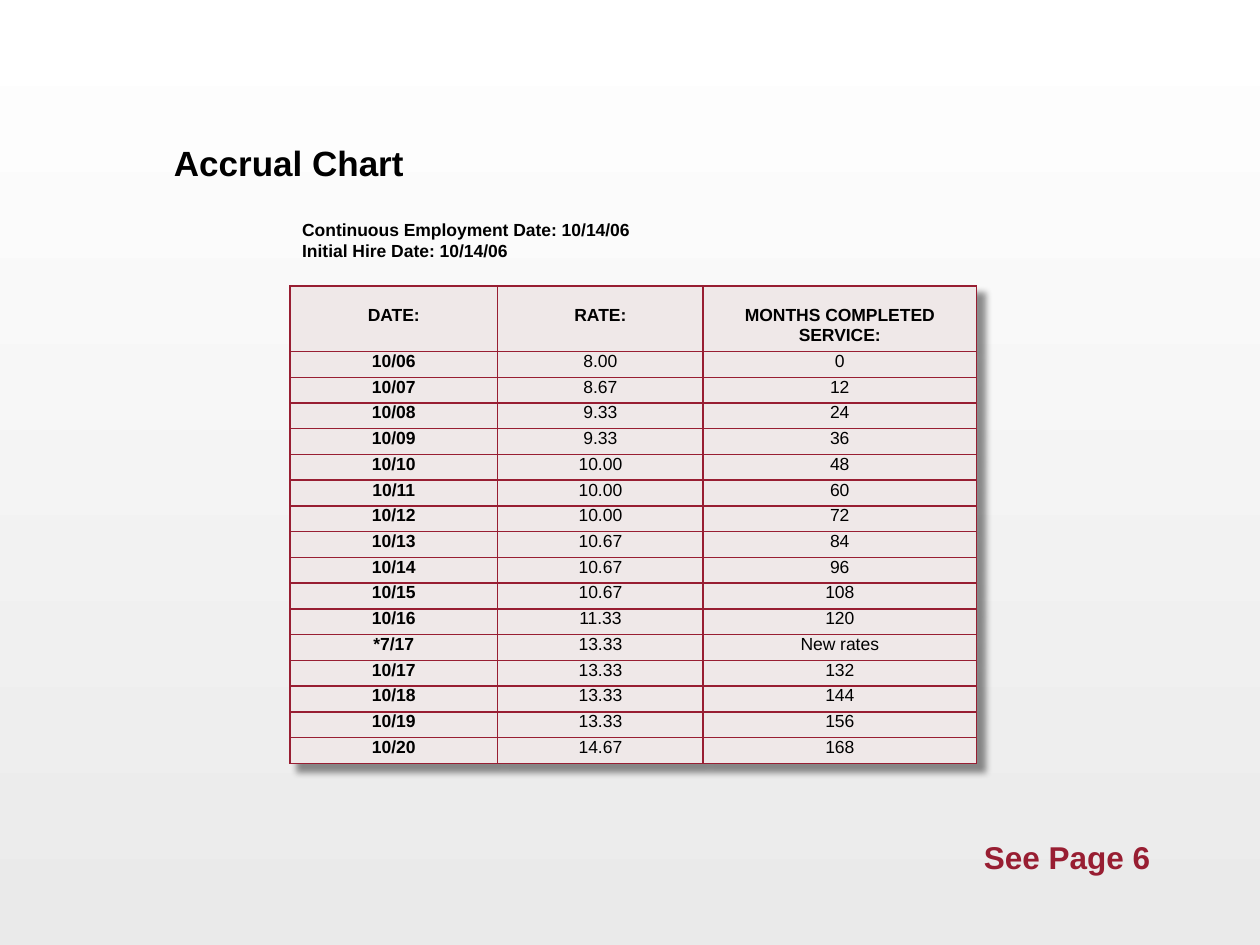
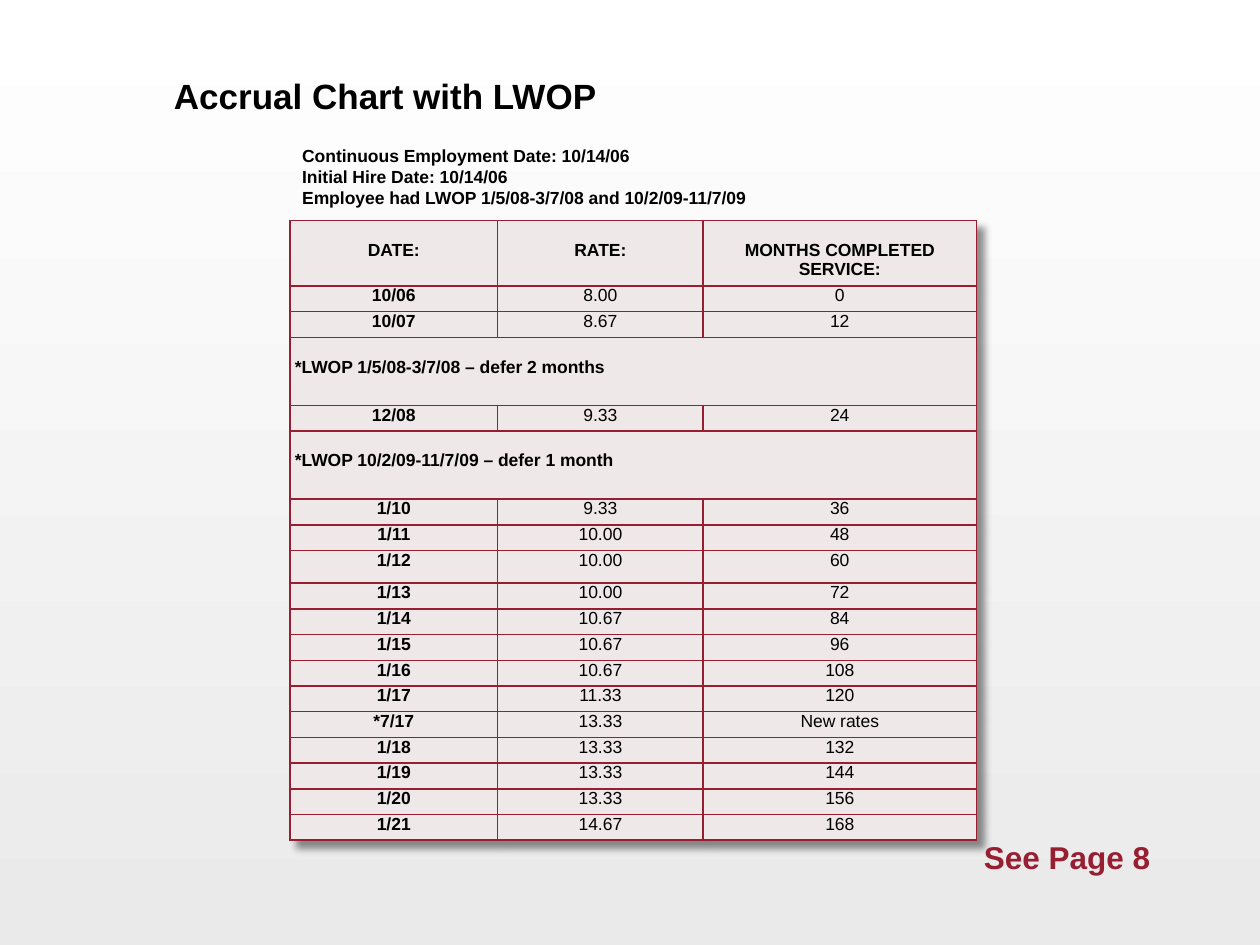
"""Builds two leave accrual slides, each with a table of rates by months of service."""
import dataclasses

import lxml.etree
import pptx
import pptx.dml.color
import pptx.enum.text
import pptx.oxml
import pptx.util
from pptx.util import Inches


@dataclasses.dataclass(frozen=True)
class Theme:
    font: str = "Arial"
    ink: str = "000000"
    crimson: str = "981E32"
    cell: str = "EFE8E8"
    backdrop: tuple = ("EAEAEA", "FFFFFF")
    title_size: int = 20
    page_size: int = 18
    text_size: int = 10


THEME = Theme()
RGB = pptx.dml.color.RGBColor.from_string
ALIGN = pptx.enum.text.PP_ALIGN
FIT = pptx.enum.text.MSO_AUTO_SIZE.SHAPE_TO_FIT_TEXT
NS = 'xmlns:a="http://schemas.openxmlformats.org/drawingml/2006/main"'
SHADOW = (
    f'<a:effectLst {NS}><a:outerShdw blurRad="50800" dist="76200" dir="2700000" algn="tl">'
    '<a:srgbClr val="000000"><a:alpha val="43000"/></a:srgbClr></a:outerShdw></a:effectLst>'
)
COLUMNS = [1.65, 1.63, 2.17]
HEADINGS = ["DATE:", "RATE:", "MONTHS COMPLETED SERVICE:"]
HEADING_HEIGHT, NOTE_HEIGHT, TEXT_LINE = 0.52, 0.54, 0.16
RATES = ["8.00", "8.67", "9.33", "9.33", "10.00", "10.00", "10.00", "10.67",
         "10.67", "10.67", "11.33", "13.33", "13.33", "13.33", "13.33", "14.67"]
MONTHS = [str(months) for months in range(0, 169, 12)]
MONTHS.insert(11, "New rates")
EMPLOYMENT = ["Continuous Employment Date: 10/14/06", "Initial Hire Date: 10/14/06"]

CHARTS = [
    {
        "title": "Accrual Chart", "title_top": 1.11,
        "facts": EMPLOYMENT, "facts_box": (1.69, 2.83, 0.44),
        "table_top": 2.27, "table_height": 3.79, "fixed_heights": {},
        "dates": ["10/06", "10/07", "10/08", "10/09", "10/10", "10/11", "10/12", "10/13",
                  "10/14", "10/15", "10/16", "*7/17", "10/17", "10/18", "10/19", "10/20"],
        "page": "See Page 6",
    },
    {
        "title": "Accrual Chart with LWOP", "title_top": 0.58,
        "facts": EMPLOYMENT + ["Employee had LWOP 1/5/08-3/7/08 and 10/2/09-11/7/09"],
        "facts_box": (1.1, 3.76, 0.61),
        "table_top": 1.75, "table_height": 4.92, "fixed_heights": {"1/12": 0.26},
        "dates": ["10/06", "10/07", "*LWOP 1/5/08-3/7/08 – defer 2 months", "12/08",
                  "*LWOP 10/2/09-11/7/09 – defer 1 month", "1/10", "1/11", "1/12", "1/13",
                  "1/14", "1/15", "1/16", "1/17", "*7/17", "1/18", "1/19", "1/20", "1/21"],
        "page": "See Page 8",
    },
]


def write(frame, lines, size, color=THEME.ink, bold=True, align=ALIGN.LEFT):
    """Fill a text frame with one paragraph per line."""
    frame.text = "\n".join(lines)
    for paragraph in frame.paragraphs:
        paragraph.alignment = align
        paragraph.font.name = THEME.font
        paragraph.font.size = pptx.util.Pt(size)
        paragraph.font.bold = bold
        paragraph.font.color.rgb = RGB(color)


def style_cell(cell, top_margin):
    """Give a cell its fill, margins and border."""
    cell.fill.solid()
    cell.fill.fore_color.rgb = RGB(THEME.cell)
    cell.margin_left = cell.margin_right = Inches(0.04)
    cell.margin_top, cell.margin_bottom = Inches(top_margin), 0
    properties = cell._tc.get_or_add_tcPr()
    for index, side in enumerate(("lnL", "lnR", "lnT", "lnB")):
        properties.insert(index, pptx.oxml.parse_xml(
            f'<a:{side} {NS} w="12700"><a:solidFill><a:srgbClr val="{THEME.crimson}"/>'
            f'</a:solidFill></a:{side}>'))


deck = pptx.Presentation()
deck.slide_width, deck.slide_height = Inches(10), Inches(7.5)
backdrop = deck.slide_master.background.fill
backdrop.gradient()
backdrop.gradient_angle = 90
for stop, color in zip(backdrop.gradient_stops, THEME.backdrop):
    stop.color.rgb = RGB(color)

for chart in CHARTS:
    slide = deck.slides.add_slide(deck.slide_layouts[5])

    title = slide.shapes.title
    title.left, title.top = Inches(0.88), Inches(chart["title_top"])
    title.width, title.height = Inches(8.5), Inches(0.4)
    heading = title.text_frame
    heading.margin_left = heading.margin_right = Inches(0.5)
    heading.vertical_anchor = pptx.enum.text.MSO_ANCHOR.BOTTOM
    heading.auto_size = FIT
    write(heading, [chart["title"]], THEME.title_size)
    heading.paragraphs[0].line_spacing = 0.9

    service = iter(zip(RATES, MONTHS))
    rows, heights = [HEADINGS], [HEADING_HEIGHT]
    for date in chart["dates"]:
        is_note = date.startswith("*LWOP")
        rows.append([date] if is_note else [date, *next(service)])
        heights.append(NOTE_HEIGHT if is_note else chart["fixed_heights"].get(date))
    fixed = [height for height in heights if height]
    even_height = (chart["table_height"] - sum(fixed)) / (len(rows) - len(fixed))

    accruals = slide.shapes.add_table(
        len(rows), len(COLUMNS), Inches(2.3), Inches(chart["table_top"]),
        Inches(sum(COLUMNS)), Inches(chart["table_height"])).table
    accruals._tbl.tblPr.insert(0, pptx.oxml.parse_xml(SHADOW))
    for column, width in zip(accruals.columns, COLUMNS):
        column.width = Inches(width)
    for r, (values, height) in enumerate(zip(rows, heights)):
        accruals.rows[r].height = Inches(height or even_height)
        is_note = len(values) == 1
        if is_note:
            accruals.cell(r, 0).merge(accruals.cell(r, len(COLUMNS) - 1))
        for c in range(len(COLUMNS)):
            style_cell(accruals.cell(r, c), TEXT_LINE if is_note or r == 0 else 0)
        for c, value in enumerate(values):
            write(accruals.cell(r, c).text_frame, [value], THEME.text_size,
                  bold=r == 0 or c == 0, align=ALIGN.LEFT if is_note else ALIGN.CENTER)

    facts_top, facts_width, facts_height = chart["facts_box"]
    for lines, box, size, color in (
        (chart["facts"], (2.3, facts_top, facts_width, facts_height), THEME.text_size, THEME.ink),
        ([chart["page"]], (7.71, 6.6, 1.53, 0.4), THEME.page_size, THEME.crimson),
    ):
        caption = slide.shapes.add_textbox(*map(Inches, box)).text_frame
        caption.word_wrap = False
        caption.auto_size = FIT
        write(caption, lines, size, color)

deck.save("out.pptx")
